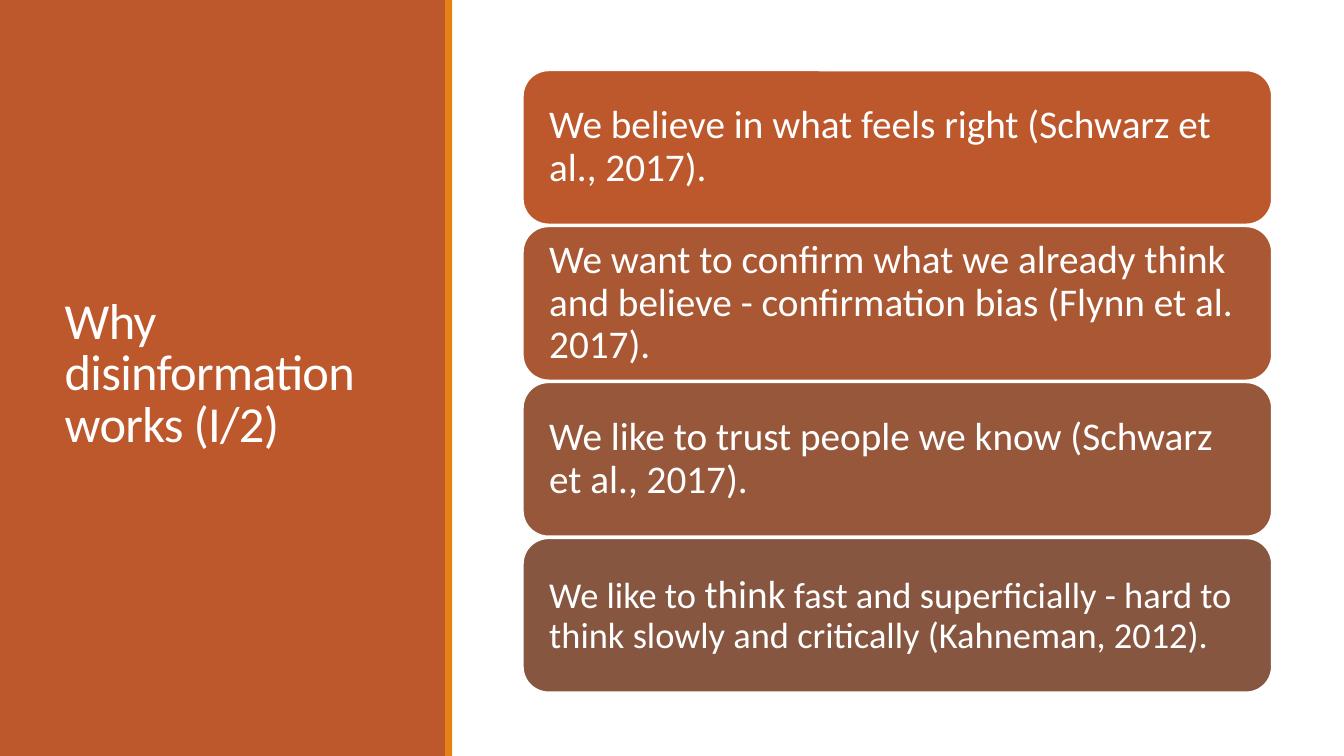
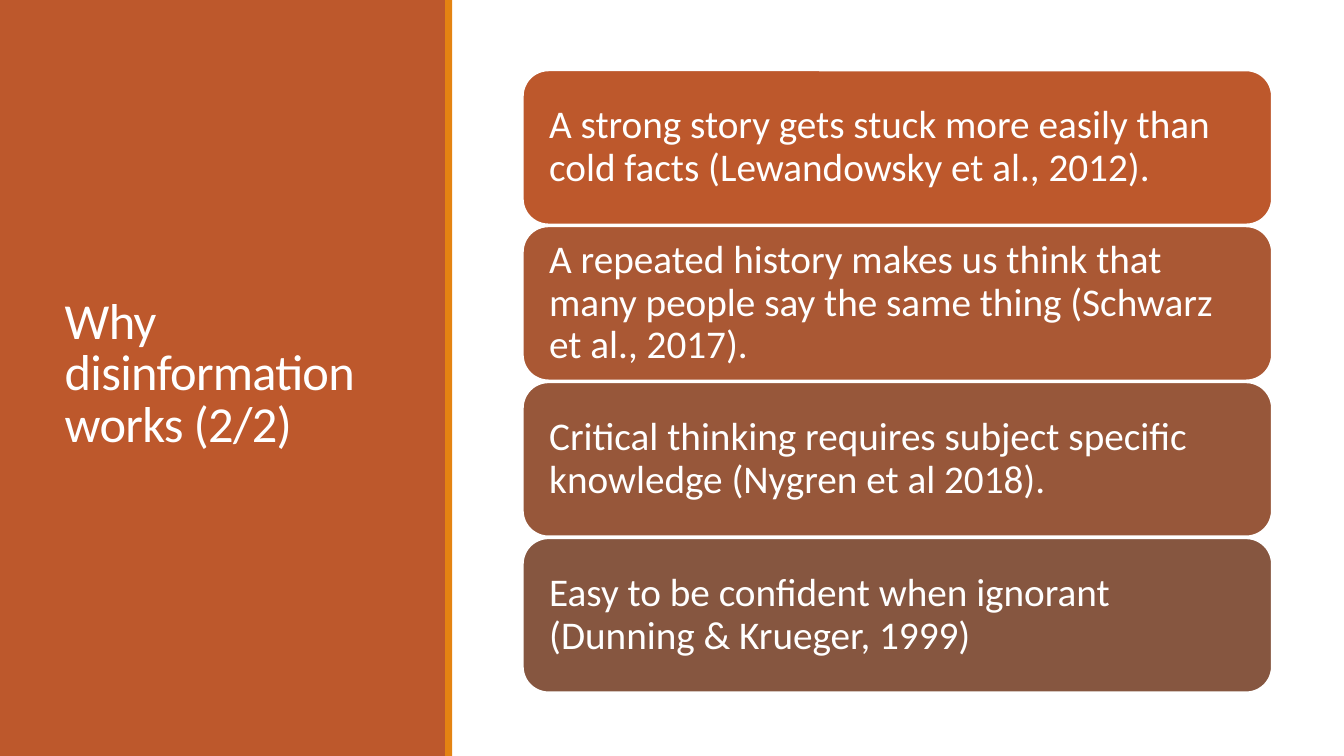
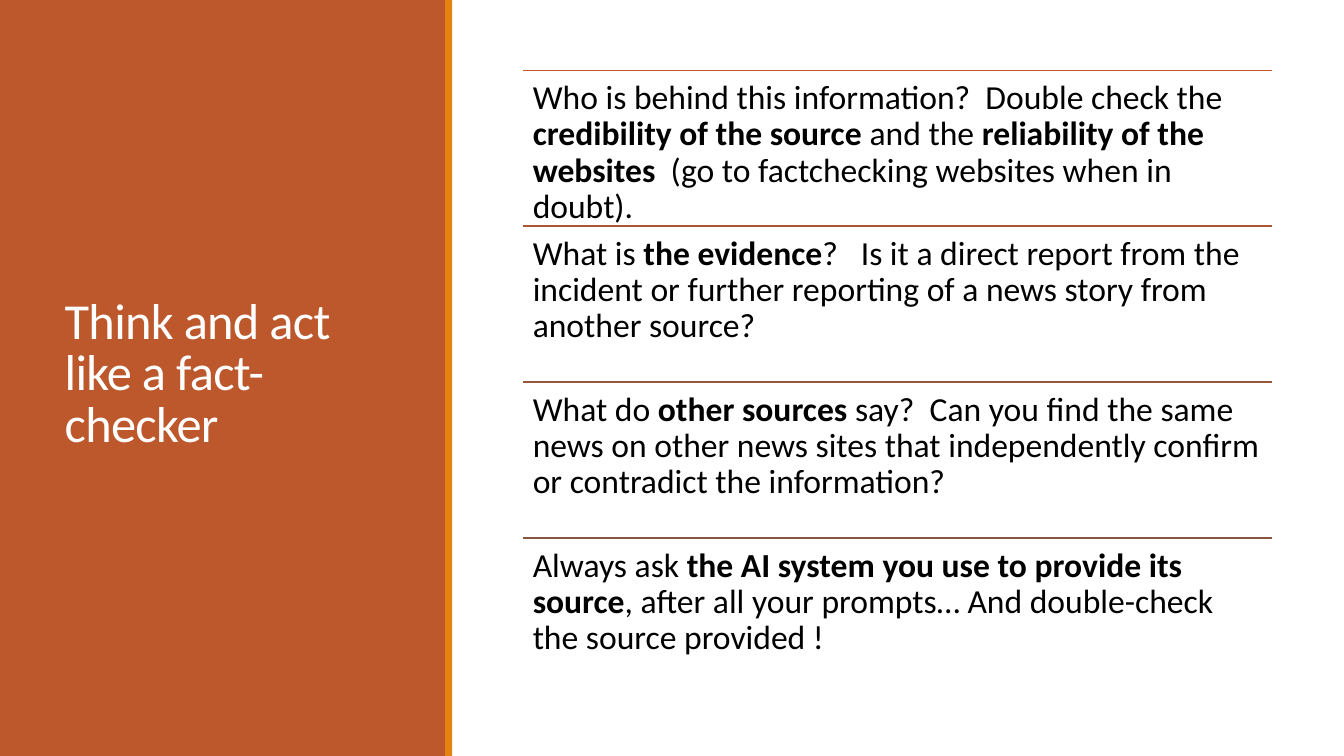
"""Build three slides on disinformation and fact-checking."""
import pptx
import pptx.dml.color
import pptx.enum.shapes
import pptx.enum.text
import pptx.oxml
import pptx.oxml.ns
import pptx.util

Pt = pptx.util.Pt
RGB = pptx.dml.color.RGBColor
SHAPE = pptx.enum.shapes.MSO_SHAPE
ANCHOR = pptx.enum.text.MSO_ANCHOR

RUST = RGB(0xBD, 0x58, 0x2C)
AMBER = RGB(0xE4, 0x83, 0x12)
WHITE = RGB(0xFF, 0xFF, 0xFF)
BLACK = RGB(0, 0, 0)
SHADES = [RUST, RGB(0xAA, 0x58, 0x34), RGB(0x97, 0x57, 0x3A), RGB(0x86, 0x56, 0x40)]

FONT = "Calibri"
WIDE, HIGH = 960, 540
LEFT, TOP, WIDTH = 373.5, 50.3, 535
STEP, CARD = 111.4, 110

WHY_ONE = [
    [("We believe in what feels right (Schwarz et al., 2017).", 28)],
    [("We want to confirm what we already think and believe - "
      "confirmation bias (Flynn et al. 2017).", 28)],
    [("We like to trust people we know (Schwarz et al., 2017).", 28)],
    [("We like to ", 26), ("think", 28),
     (" fast and superficially - hard to think slowly and critically "
      "(Kahneman, 2012).", 26)],
]
WHY_TWO = [
    [("A strong story gets stuck more easily than cold facts "
      "(Lewandowsky et al., 2012).", 28)],
    [("A repeated history makes us think that many people say the same thing "
      "(Schwarz et al., 2017).", 28)],
    [("Critical thinking requires subject specific knowledge "
      "(Nygren et al 2018).", 28)],
    [("Easy to be confident when ignorant (Dunning & Krueger, 1999)", 28)],
]
CHECKS = [
    [("Who is behind this information?  Double check the ", 24),
     ("credibility of the source ", 24, True), ("and the ", 24),
     ("reliability of the websites ", 24, True),
     (" (go to factchecking websites when in doubt).", 24)],
    [("What is ", 24), ("the evidence", 24, True),
     ("?   Is it a direct report from the incident or further reporting "
      "of a news story from another source?", 24)],
    [("What do ", 24), ("other sources ", 24, True),
     ("say?  Can you find the same news on other news sites that "
      "independently confirm or contradict the information?", 24)],
    [("Always ask ", 24),
     ("the AI system you use to provide its source", 24, True),
     (", after all your prompts… And double-check the source provided !", 24)],
]


def write(frame, runs, color, anchor, inset, spacing=0.9):
    """Fill a text frame with one left-aligned paragraph of runs."""
    frame.word_wrap = True
    frame.auto_size = pptx.enum.text.MSO_AUTO_SIZE.NONE
    frame.vertical_anchor = anchor
    frame.margin_left = frame.margin_right = Pt(inset)
    frame.margin_top = frame.margin_bottom = Pt(inset)
    para = frame.paragraphs[0]
    para.alignment = pptx.enum.text.PP_ALIGN.LEFT
    para.line_spacing = spacing
    for text, size, *bold in runs:
        run = para.add_run()
        run.text = text
        run.font.name = FONT
        run.font.size = Pt(size)
        run.font.bold = bool(bold)
        run.font.color.rgb = color
    return para


def block(slide, kind, box, fill):
    """Add a filled shape without shadow or outline."""
    shape = slide.shapes.add_shape(kind, *map(Pt, box))
    shape.shadow.inherit = False
    shape.fill.solid()
    shape.fill.fore_color.rgb = fill
    shape.line.fill.background()
    return shape


def panel(layout, slide):
    """Draw the side panel and its edge, then move both to the layout."""
    for box, fill in [((0, 0, 319, HIGH), RUST), ((318, 0, 5, HIGH), AMBER)]:
        band = block(slide, SHAPE.RECTANGLE, box, fill)
        layout.placeholders[0].element.addprevious(band.element)


def title(slide, text):
    """Place and format the slide title on the side panel."""
    head = slide.shapes.title
    head.left, head.top, head.width, head.height = map(Pt, (39, 41, 242.6, 454.3))
    para = write(head.text_frame, [(text, 36)], WHITE, ANCHOR.MIDDLE, 7.2, 0.85)
    for run in para.runs:
        run._r.get_or_add_rPr().set("spc", "-50")


def card(slide, top, shade, runs):
    """Add a rounded card holding one statement."""
    shape = block(slide, SHAPE.ROUNDED_RECTANGLE, (LEFT, top, WIDTH, CARD), shade)
    shape.line.color.rgb = WHITE
    shape.line.width = Pt(1.25)
    write(shape.text_frame, runs, WHITE, ANCHOR.MIDDLE, 13.5)


def entry(slide, top, shade, runs):
    """Add a rule with one question below it."""
    rule = slide.shapes.add_connector(
        pptx.enum.shapes.MSO_CONNECTOR.STRAIGHT,
        Pt(LEFT), Pt(top), Pt(LEFT + WIDTH), Pt(top))
    rule.line.color.rgb = shade
    rule.line.width = Pt(1.25)
    rule.element.spPr.append(
        pptx.oxml.parse_xml("<a:effectLst %s/>" % pptx.oxml.ns.nsdecls("a")))
    box = slide.shapes.add_textbox(Pt(LEFT), Pt(top), Pt(WIDTH), Pt(STEP))
    write(box.text_frame, runs, BLACK, ANCHOR.TOP, 7.2)


def main():
    """Build and save the deck."""
    deck = pptx.Presentation()
    deck.slide_width, deck.slide_height = Pt(WIDE), Pt(HIGH)
    layout = deck.slide_layouts[5]
    pages = [
        ("Why disinformation works (I/2)", card, WHY_ONE),
        ("Why disinformation works (2/2)", card, WHY_TWO),
        ("Think and act like a fact-checker", entry, CHECKS),
    ]
    for page, (head, draw, items) in enumerate(pages):
        slide = deck.slides.add_slide(layout)
        if page == 0:
            panel(layout, slide)
        title(slide, head)
        for row, (shade, runs) in enumerate(zip(SHADES, items)):
            draw(slide, TOP + row * STEP, shade, runs)
    deck.save("out.pptx")


if __name__ == "__main__":
    main()
